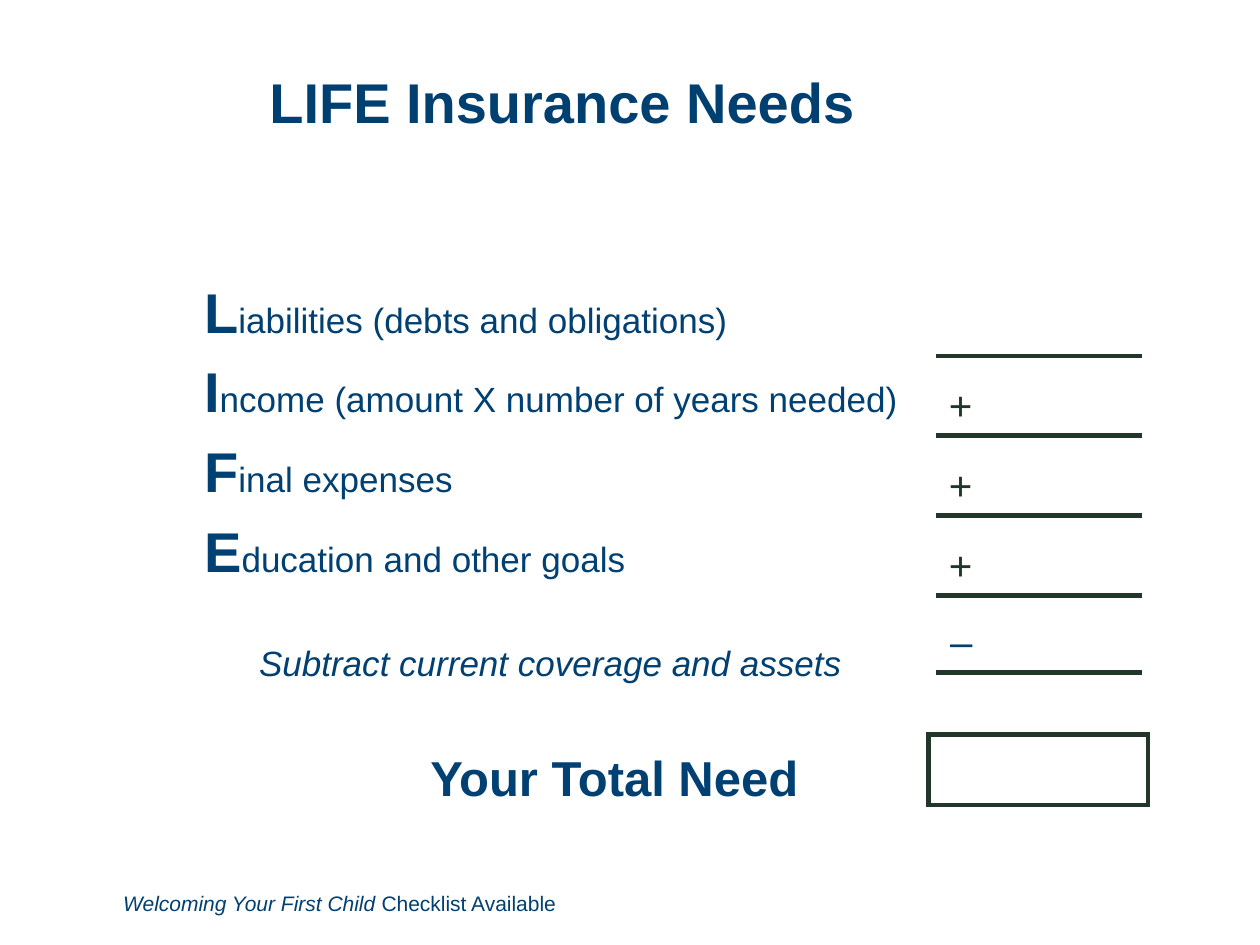
import dataclasses

import lxml.etree
import pptx
import pptx.dml.color
import pptx.enum.text
import pptx.oxml.ns
import pptx.util

Inches = pptx.util.Inches
Align = pptx.enum.text.PP_ALIGN
Anchor = pptx.enum.text.MSO_ANCHOR


@dataclasses.dataclass(frozen=True)
class Theme:
    font: str = "Arial"
    title_color: str = "004071"
    text_color: str = "004072"
    line_color: str = "23362A"
    line_width: float = 3
    headline_size: int = 32
    total_size: int = 28
    sign_size: int = 23
    body_size: int = 20
    note_size: int = 12


class SlideBuilder:
    """Draws styled text and tables on one slide."""

    def __init__(self, slide, theme):
        self.slide = slide
        self.theme = theme

    def add_run(self, paragraph, text, size, color=None, bold=False, italic=False):
        run = paragraph.add_run()
        run.text = text
        font = run.font
        font.name = self.theme.font
        font.size = pptx.util.Pt(size)
        font.bold = bold
        font.italic = italic
        font.color.rgb = pptx.dml.color.RGBColor.from_string(color or self.theme.text_color)

    def add_text(self, left, top, width, height, align=Align.LEFT, grow=True):
        shape = self.slide.shapes.add_textbox(
            Inches(left), Inches(top), Inches(width), Inches(height))
        frame = shape.text_frame
        frame.word_wrap = True
        if grow:
            frame.auto_size = pptx.enum.text.MSO_AUTO_SIZE.SHAPE_TO_FIT_TEXT
        else:
            frame.vertical_anchor = Anchor.MIDDLE
        paragraph = frame.paragraphs[0]
        paragraph.alignment = align
        return paragraph

    def add_table(self, left, top, columns, rows):
        table = self.slide.shapes.add_table(
            len(rows), len(columns), Inches(left), Inches(top),
            Inches(sum(columns)), Inches(sum(rows))).table
        table.first_row = False
        table.horz_banding = False
        for column, width in zip(table.columns, columns):
            column.width = Inches(width)
        for row, height in zip(table.rows, rows):
            row.height = Inches(height)
        for cell in table.iter_cells():
            self.style_cell(cell)
        return table

    def style_cell(self, cell, sides=""):
        cell.fill.background()
        properties = cell._tc.get_or_add_tcPr()
        for index, side in enumerate("LRTB"):
            tag = pptx.oxml.ns.qn(f"a:ln{side}")
            for previous in properties.findall(tag):
                properties.remove(previous)
            border = lxml.etree.Element(tag)
            if side in sides:
                border.set("w", str(pptx.util.Pt(self.theme.line_width)))
                fill = lxml.etree.SubElement(border, pptx.oxml.ns.qn("a:solidFill"))
                color = lxml.etree.SubElement(fill, pptx.oxml.ns.qn("a:srgbClr"))
                color.set("val", self.theme.line_color)
            else:
                lxml.etree.SubElement(border, pptx.oxml.ns.qn("a:noFill"))
            properties.insert(index, border)


def add_needs_table(builder):
    theme = builder.theme
    needs = [
        ("L", "iabilities (debts and obligations)", ""),
        ("I", "ncome (amount X number of years needed)", "+"),
        ("F", "inal expenses", "+"),
        ("E", "ducation and other goals", "+"),
        ("", "", ""),
    ]
    table = builder.add_table(1.52, 2.19, [5.91, 1.63], [0.61] * 5 + [0.64] * 2)
    for row, (initial, rest, sign) in enumerate(needs):
        if initial:
            paragraph = table.cell(row, 0).text_frame.paragraphs[0]
            builder.add_run(paragraph, initial, theme.headline_size, bold=True)
            builder.add_run(paragraph, rest, theme.body_size)
        amount = table.cell(row, 1)
        amount.vertical_anchor = Anchor.BOTTOM
        builder.style_cell(amount, "TB" if row else "B")
        if sign:
            builder.add_run(amount.text_frame.paragraphs[0], sign,
                            theme.sign_size, theme.line_color)
    builder.style_cell(table.cell(len(needs), 1), "T")
    for row in range(len(needs), len(table.rows)):
        table.cell(row, 0).merge(table.cell(row, 1))


def main():
    presentation = pptx.Presentation()
    presentation.slide_width = Inches(10)
    presentation.slide_height = Inches(7.5)
    theme = Theme()
    builder = SlideBuilder(
        presentation.slides.add_slide(presentation.slide_layouts[6]), theme)

    title = builder.add_text(2.04, 0.11, 7.26, 1.45, grow=False)
    title.line_spacing = 0.9
    builder.add_run(title, "LIFE Insurance Needs", theme.headline_size,
                    theme.title_color, bold=True)

    add_needs_table(builder)

    subtract = builder.add_text(0.77, 5.04, 6.01, 0.44, Align.RIGHT)
    builder.add_run(subtract, "Subtract current coverage and assets",
                    theme.body_size, italic=True)
    minus = builder.add_table(7.44, 4.87, [2.01], [0.48]).cell(0, 0)
    builder.add_run(minus.text_frame.paragraphs[0], "–", theme.sign_size)

    total = builder.add_text(2.98, 5.88, 3.79, 0.57, Align.CENTER)
    builder.add_run(total, "Your Total Need", theme.total_size, bold=True)
    total_box = builder.add_table(7.37, 5.83, [1.74], [0.56])
    builder.style_cell(total_box.cell(0, 0), "LRTB")

    note = builder.add_text(0.88, 7.02, 7.34, 0.3)
    builder.add_run(note, "Welcoming Your First Child ", theme.note_size, italic=True)
    builder.add_run(note, "Checklist Available", theme.note_size)

    presentation.save("out.pptx")


if __name__ == "__main__":
    main()
